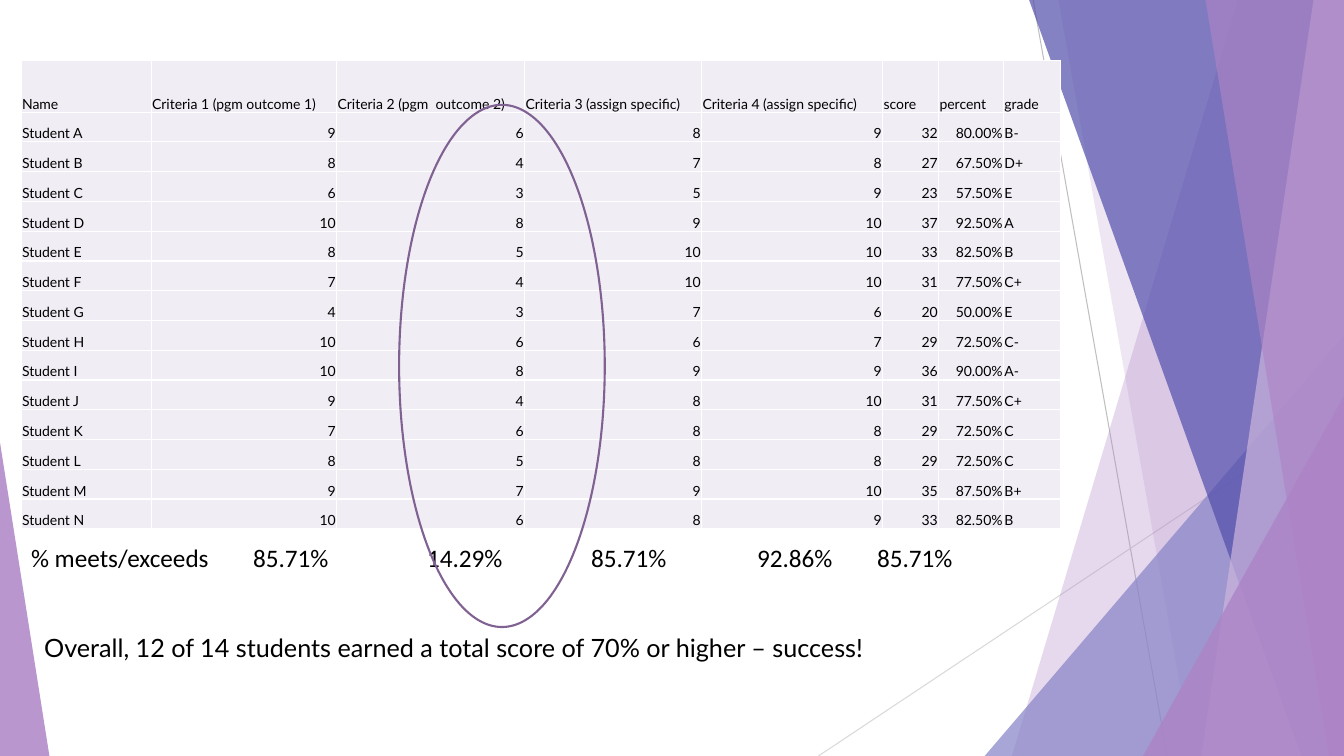
import lxml.etree
import pptx
import pptx.dml.color
import pptx.enum.shapes
import pptx.enum.text
import pptx.oxml.ns
import pptx.util
from dataclasses import dataclass

Pt = pptx.util.Pt
qn = pptx.oxml.ns.qn
Kind = pptx.enum.shapes.MSO_SHAPE
Align = pptx.enum.text.PP_ALIGN


@dataclass(frozen=True)
class Theme:
    ink: str = "000000"
    cell: str = "F1EDF5"
    grid: str = "FFFFFF"
    ring: str = "806292"
    mauve: str = "AD84C6"
    lilac: str = "CEB5DD"
    sky: str = "8784C7"
    navy: str = "524EAB"
    gray: str = "BFBFBF"
    pale: str = "D9D9D9"
    small: int = 10
    large: int = 18
    font: str = "Lato"
    plain: str = "Calibri"


def tone(code):
    return pptx.dml.color.RGBColor.from_string(code)


def put(item, vals):
    for key, val in vals.items():
        setattr(item, key, val)


class Deck:
    def __init__(self, theme, wide, high):
        self.theme = theme
        self.file = pptx.Presentation()
        put(self.file, {"slide_width": Pt(wide), "slide_height": Pt(high)})
        self.slide = self.file.slides.add_slide(self.file.slide_layouts[6])
        self.shapes = self.slide.shapes

    def label(self, para, text, size, font, align=Align.LEFT):
        para.alignment = align
        run = para.add_run()
        run.text = text
        put(run.font, {"size": Pt(size), "name": font})
        run.font.color.rgb = tone(self.theme.ink)

    def tint(self, shape, color, alpha):
        shape.shadow.inherit = False
        shape.line.fill.background()
        shape.fill.solid()
        shape.fill.fore_color.rgb = tone(color)
        clear = shape._element.spPr.find(qn("a:solidFill"))[0]
        lxml.etree.SubElement(clear, qn("a:alpha"), val=str(alpha * 1000))

    def line(self, start, end, color):
        link = self.shapes.add_connector(
            pptx.enum.shapes.MSO_CONNECTOR.STRAIGHT,
            *(Pt(v) for v in start + end))
        link.line.color.rgb = tone(color)
        link.line.width = Pt(0.75)
        lxml.etree.SubElement(link._element.spPr, qn("a:effectLst"))

    def band(self, points, color, alpha):
        first, *rest = [(Pt(x), Pt(y)) for x, y in points]
        form = self.shapes.build_freeform(*first)
        form.add_line_segments(rest, close=True)
        self.tint(form.convert_to_shape(), color, alpha)

    def wedge(self, box, tip, color, alpha):
        shape = self.shapes.add_shape(
            Kind.ISOSCELES_TRIANGLE, *(Pt(v) for v in box))
        shape.adjustments[0] = tip
        self.tint(shape, color, alpha)

    def ring(self, box):
        shape = self.shapes.add_shape(Kind.OVAL, *(Pt(v) for v in box))
        shape.shadow.inherit = False
        shape.fill.background()
        shape.line.color.rgb = tone(self.theme.ring)
        shape.line.width = Pt(1.5)

    def text(self, box, words, font, tabs=()):
        frame = self.shapes.add_textbox(*(Pt(v) for v in box)).text_frame
        put(frame, {"word_wrap": True,
                    "auto_size": pptx.enum.text.MSO_AUTO_SIZE.SHAPE_TO_FIT_TEXT})
        para = frame.paragraphs[0]
        self.label(para, words, self.theme.large, font)
        if tabs:
            stops = lxml.etree.SubElement(
                para._p.get_or_add_pPr(), qn("a:tabLst"))
            for stop in tabs:
                lxml.etree.SubElement(
                    stops, qn("a:tab"), pos=str(Pt(stop)), algn="l")

    def cell(self, cell, words, align):
        put(cell, {"margin_left": Pt(0.7), "margin_right": Pt(0.7),
                   "margin_top": Pt(0.7), "margin_bottom": 0,
                   "vertical_anchor": pptx.enum.text.MSO_ANCHOR.BOTTOM})
        props = cell._tc.get_or_add_tcPr()
        for side in ("a:lnL", "a:lnR", "a:lnT", "a:lnB"):
            edge = lxml.etree.SubElement(props, qn(side), w=str(Pt(1)))
            fill = lxml.etree.SubElement(edge, qn("a:solidFill"))
            lxml.etree.SubElement(fill, qn("a:srgbClr"), val=self.theme.grid)
        cell.fill.solid()
        cell.fill.fore_color.rgb = tone(self.theme.cell)
        self.label(cell.text_frame.paragraphs[0], words,
                   self.theme.small, self.theme.font, align)

    def table(self, left, top, cols, highs, rows):
        grid = self.shapes.add_table(
            len(rows), len(cols), Pt(left), Pt(top),
            Pt(sum(cols)), Pt(sum(highs))).table
        put(grid, {"first_row": False, "horz_banding": False})
        for col, wide in zip(grid.columns, cols):
            col.width = Pt(wide)
        for r, row in enumerate(rows):
            grid.rows[r].height = Pt(highs[r])
            for c, words in enumerate(row):
                right = r > 0 and 0 < c < len(row) - 1
                self.cell(grid.cell(r, c), words,
                          Align.RIGHT if right else Align.LEFT)


HEADS = ["Name", "Criteria 1 (pgm outcome 1)", "Criteria 2 (pgm  outcome 2)",
         "Criteria 3 (assign specific)", "Criteria 4 (assign specific)",
         "score", "percent", "grade"]
MARKS = {
    "A": (9, 6, 8, 9, "B-"), "B": (8, 4, 7, 8, "D+"),
    "C": (6, 3, 5, 9, "E"), "D": (10, 8, 9, 10, "A"),
    "E": (8, 5, 10, 10, "B"), "F": (7, 4, 10, 10, "C+"),
    "G": (4, 3, 7, 6, "E"), "H": (10, 6, 6, 7, "C-"),
    "I": (10, 8, 9, 9, "A-"), "J": (9, 4, 8, 10, "C+"),
    "K": (7, 6, 8, 8, "C"), "L": (8, 5, 8, 8, "C"),
    "M": (9, 7, 9, 10, "B+"), "N": (10, 6, 8, 9, "B"),
}
FULL = 40  # four criteria of ten points


def score_row(name, marks):
    *points, grade = marks
    total = sum(points)
    return [f"Student {name}", *map(str, points), str(total),
            f"{total / FULL:.2%}", grade]


def main():
    theme = Theme()
    wide, high = 960, 540
    deck = Deck(theme, wide, high)

    # Backdrop: thin lines, slanted bands up to the right edge, corner wedges
    deck.line((738, 0), (833.76, high), theme.gray)
    deck.line((wide, 290.2), (584.6, high), theme.pale)

    def slant(top, base, color, alpha):
        deck.band([(top, 0), (wide, 0), (wide, high), (base, high)],
                  color, alpha)

    slant(884.2, 722.9, theme.mauve, 30)
    slant(756, 851.8, theme.mauve, 20)
    deck.wedge((703.4, 239.8, 256.6, 300.2), 1, theme.sky, 72)
    slant(735.1, 929.5, theme.navy, 70)
    slant(938.2, 858.2, theme.lilac, 70)
    slant(861.1, 949, theme.mauve, 65)
    deck.wedge((816.5, 283, 143.5, 257), 1, theme.mauve, 80)
    deck.wedge((0, 316.1, 35.3, 223.9), 0, theme.mauve, 85)

    # Score table
    rows = [HEADS] + [score_row(*pair) for pair in MARKS.items()]
    deck.table(15.1, 43.2, [92.9, 132.5, 134.3, 126.4, 129.3, 40, 46.4, 40.9],
               [36.9] + [21.28] * len(MARKS), rows)

    # Result and share of students who meet each target
    deck.text((24.5, 447.8, 681.8, 29), "Overall, 12 of 14 students earned a "
              "total score of 70% or higher – success!", theme.font)
    shares = ["% meets/exceeds", "85.71%", "14.29%", "85.71%", "92.86%",
              "85.71%"]
    deck.text((15.1, 383.8, 722.9, 29), "\t".join(shares), theme.plain,
              (158.6, 282.9, 400, 518.6, 604.3))

    # Ring around the weak criterion
    deck.ring((285.1, 74.9, 146.9, 373))

    deck.file.save("out.pptx")


if __name__ == "__main__":
    main()
